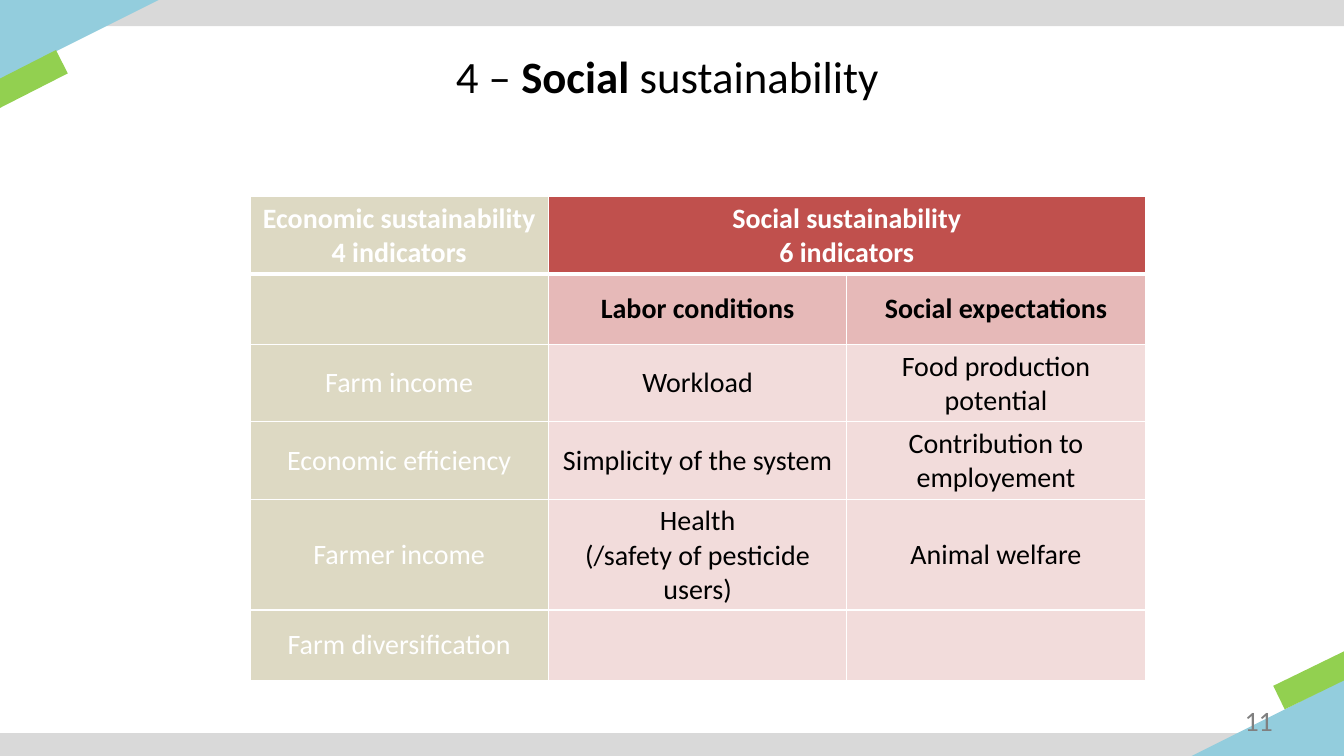
from lxml.etree import SubElement
from pptx import Presentation
from pptx.dml.color import RGBColor
from pptx.enum.shapes import MSO_SHAPE
from pptx.enum.text import MSO_ANCHOR, PP_ALIGN
from pptx.oxml.ns import qn
from pptx.util import Cm, Pt

TITLE = "4 – **Social** sustainability"
PAGE_NUMBER = "11"
INDICATORS = [
    ["Economic sustainability\n4 indicators", "Social sustainability\n6 indicators", ""],
    ["", "Labor conditions", "Social expectations"],
    ["Farm income", "Workload", "Food production potential"],
    ["Economic efficiency", "Simplicity of the system", "Contribution to employement"],
    ["Farmer income", "Health\n(/safety of pesticide users)", "Animal welfare"],
    ["Farm diversification", "", ""],
]
WHITE, BLACK, GRAY = "FFFFFF", "000000", "808080"
BAR, BLUE, GREEN = "D9D9D9", "93CDDD", "92D050"
ECONOMIC = "DDD9C3"
SOCIAL_HEADER, SOCIAL_GROUP, SOCIAL_ITEM = "C0504D", "E6B9B8", "F2DCDB"
DECORATIONS = [
    (MSO_SHAPE.RECTANGLE, (0, 0, 33.87, 0.66), 0, BAR),
    (MSO_SHAPE.ISOSCELES_TRIANGLE, (1, -1, 2, 4), 90, BLUE),
    (MSO_SHAPE.RECTANGLE, (-0.33, 1.68, 2, 0.66), 333, GREEN),
    (MSO_SHAPE.RECTANGLE, (0, 18.47, 33.87, 0.66), 180, BAR),
    (MSO_SHAPE.ISOSCELES_TRIANGLE, (30.87, 16.13, 2, 4), 270, BLUE),
    (MSO_SHAPE.RECTANGLE, (32.13, 16.81, 2, 0.66), 154, GREEN),
]
TITLE_BOX = (1.3, 1.02, 31.04, 1.75)
NUMBER_BOX = (30.25, 17.65, 2.08, 1.02)
TABLE_LEFT, TABLE_TOP = 6.3, 4.95
COLUMN_WIDTH, ROW_HEIGHT = 7.52, 1.78


def color(value):
    return RGBColor.from_string(value)


def box(lengths):
    return [Cm(length) for length in lengths]


def write(frame, text, size=20, ink=BLACK, bold=False, align=PP_ALIGN.CENTER):
    for number, line in enumerate(text.split("\n")):
        paragraph = frame.add_paragraph() if number else frame.paragraphs[0]
        paragraph.alignment = align
        for position, part in enumerate(line.split("**")):
            if part:
                run = paragraph.add_run()
                run.text = part
                run.font.name = "Calibri"
                run.font.size = Pt(size)
                run.font.bold = bold or position % 2 == 1
                run.font.color.rgb = color(ink)


def add_label(slide, place, text, **style):
    frame = slide.shapes.add_textbox(*box(place)).text_frame
    frame.word_wrap = True
    frame.vertical_anchor = MSO_ANCHOR.MIDDLE
    write(frame, text, **style)


def add_decoration(slide, kind, place, rotation, fill):
    decoration = slide.shapes.add_shape(kind, *box(place))
    decoration.rotation = rotation
    decoration.shadow.inherit = False
    decoration.fill.solid()
    decoration.fill.fore_color.rgb = color(fill)
    decoration.line.fill.background()
    if kind == MSO_SHAPE.ISOSCELES_TRIANGLE:
        decoration.adjustments[0] = 0


def add_borders(cell, widths):
    properties = cell._tc.get_or_add_tcPr()
    for side, width in zip("LRTB", widths):
        border = SubElement(properties, qn(f"a:ln{side}"), w=str(Pt(width)))
        fill = SubElement(border, qn("a:solidFill"))
        SubElement(fill, qn("a:srgbClr"), val=WHITE)


def add_indicators(slide):
    rows, columns = len(INDICATORS), len(INDICATORS[0])
    place = (TABLE_LEFT, TABLE_TOP, columns * COLUMN_WIDTH, rows * ROW_HEIGHT)
    table = slide.shapes.add_table(rows, columns, *box(place)).table
    for column in table.columns:
        column.width = Cm(COLUMN_WIDTH)
    for row in table.rows:
        row.height = Cm(ROW_HEIGHT)
    table.cell(0, 1).merge(table.cell(0, 2))
    social_fills = [SOCIAL_HEADER, SOCIAL_GROUP] + [SOCIAL_ITEM] * (rows - 2)
    for r, texts in enumerate(INDICATORS):
        for c, text in enumerate(texts):
            cell = table.cell(r, c)
            add_borders(cell, (1, 1, 3 if r == 1 else 1, 3 if r == 0 else 1))
            cell.fill.solid()
            cell.fill.fore_color.rgb = color(social_fills[r] if c else ECONOMIC)
            cell.vertical_anchor = MSO_ANCHOR.MIDDLE
            ink = WHITE if r == 0 or c == 0 else BLACK
            write(cell.text_frame, text, ink=ink, bold=r < 2)


def main():
    presentation = Presentation()
    presentation.slide_width, presentation.slide_height = Cm(33.87), Cm(19.05)
    slide = presentation.slides.add_slide(presentation.slide_layouts[6])
    for decoration in DECORATIONS:
        add_decoration(slide, *decoration)
    add_label(slide, NUMBER_BOX, PAGE_NUMBER, ink=GRAY, align=PP_ALIGN.RIGHT)
    add_indicators(slide)
    add_label(slide, TITLE_BOX, TITLE, size=32)
    presentation.save("out.pptx")


if __name__ == "__main__":
    main()
